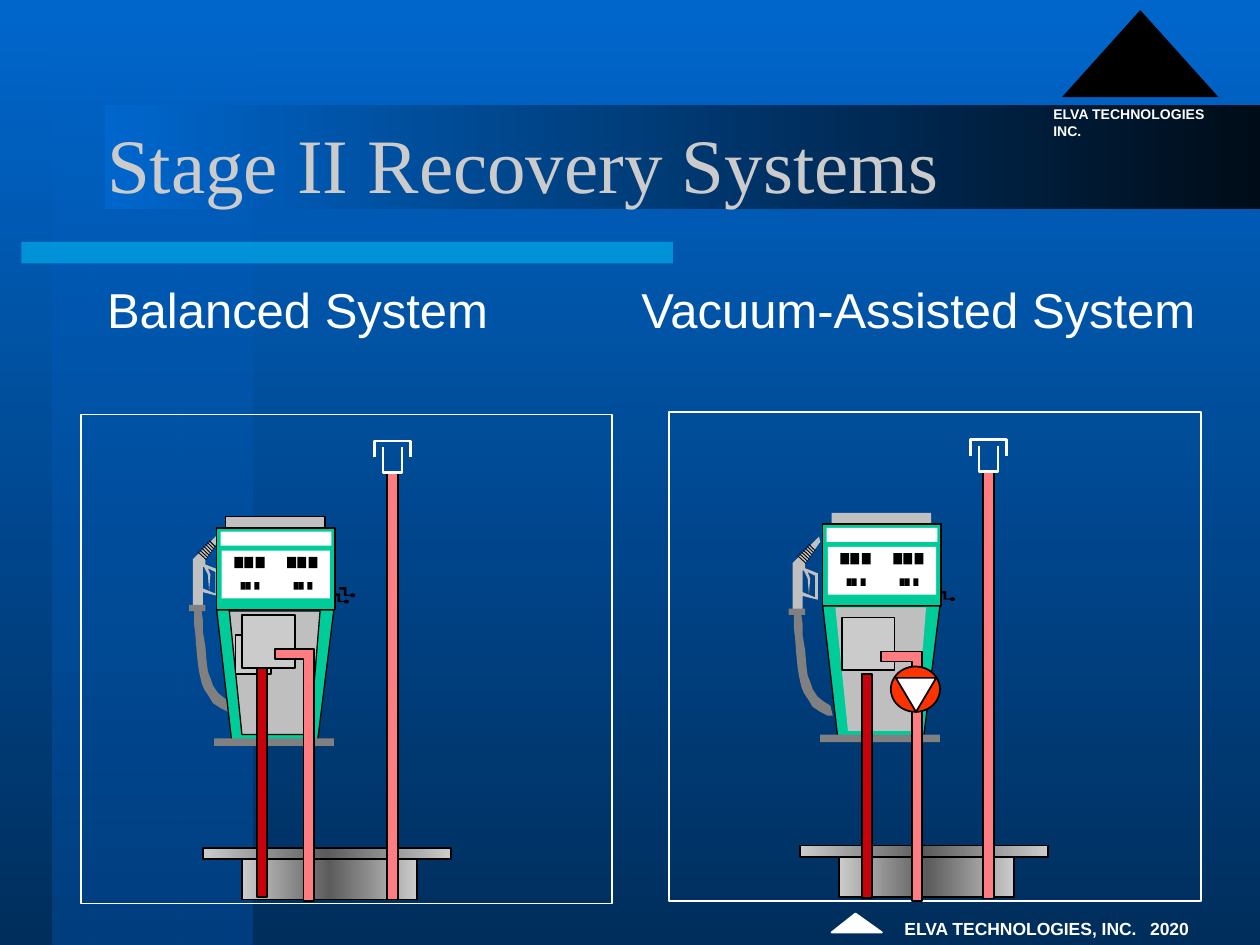
import pptx
import pptx.util
import pptx.dml.color
import pptx.enum.shapes
import pptx.enum.text
import pptx.oxml
import pptx.oxml.ns
from lxml import etree

Inches, Pt = pptx.util.Inches, pptx.util.Pt
qn = pptx.oxml.ns.qn
rgb = pptx.dml.color.RGBColor.from_string
FORM = pptx.enum.shapes.MSO_SHAPE
RECT, OVAL, TRIANGLE = FORM.RECTANGLE, FORM.OVAL, FORM.ISOSCELES_TRIANGLE
BLACK, WHITE, STEEL, PINK = "000000", "FFFFFF", "CBCBCB", "FF7C80"
GREEN, GREY, HOSE_GREY = "00CC99", "C0C0C0", "808080"
METAL = [STEEL, "5C5C5C", STEEL]


def paint(fill, root, colours, angle=0):
    """Fill with one RRGGBB[AA] colour, or a list of them as an even gradient."""
    if isinstance(colours, str):
        fill.solid()
        fill.fore_color.rgb = rgb(colours[:6])
        nodes = [root.find(".//" + qn("a:srgbClr"))]
        colours = [colours]
    else:
        fill.gradient()
        fill.gradient_angle = angle
        stops = root.find(".//" + qn("a:gsLst"))
        for stop in list(stops):
            stops.remove(stop)
        nodes = []
        for i, colour in enumerate(colours):
            position = str(round(100000 * i / (len(colours) - 1)))
            stop = etree.SubElement(stops, qn("a:gs"), pos=position)
            nodes.append(etree.SubElement(stop, qn("a:srgbClr"), val=colour[:6]))
    for node, colour in zip(nodes, colours):
        if len(colour) == 8:
            alpha = str(round(int(colour[6:], 16) / 255 * 100) * 1000)
            etree.SubElement(node, qn("a:alpha"), val=alpha)


def draw(form, at, fill=None, line=None, width=1, angle=0, closed=True):
    """Add a preset at (left, top, width, height), or a list of points offset by at."""
    if isinstance(form, list):
        points = [(Inches(at[0] + x), Inches(at[1] + y)) for x, y in form]
        outline = slide.shapes.build_freeform(*points[0])
        outline.add_line_segments(points[1:], close=closed)
        shape = outline.convert_to_shape()
    else:
        shape = slide.shapes.add_shape(form, *map(Inches, at))
    shape.shadow.inherit = False
    if fill:
        paint(shape.fill, shape._element.spPr, fill, angle)
    else:
        shape.fill.background()
    if line:
        shape.line.color.rgb = rgb(line)
        shape.line.width = Pt(width)
    else:
        shape.line.fill.background()
    return shape


prs = pptx.Presentation()
prs.slide_width, prs.slide_height = Inches(10), Inches(7.5)
slide = prs.slides.add_slide(prs.slide_layouts[3])
title, balanced, vacuum = slide.placeholders

# Backdrop
paint(slide.background.fill, slide._element, ["0066CC", "002E5C"], 270)
draw(RECT, (0.42, 0, 1.58, 7.5), ["0066CC80", "003F80"], angle=270)
draw(RECT, (0.17, 1.92, 5.17, 0.17), "00CCFF80")
draw(RECT, (0.83, 0.83, 9.17, 0.83), ["0066CC", "000C18"])
draw(TRIANGLE, (8.43, 0.08, 1.24, 0.69), BLACK)
draw(TRIANGLE, (6.6, 7.25, 0.4, 0.15), WHITE, WHITE).adjustments[0] = 0.475

# Text
company = slide.shapes.add_textbox(0, 0, 0, 0)
footer = slide.shapes.add_textbox(0, 0, 0, 0)
heading = {"size": Pt(28), "name": "Arial", "bold": False}
texts = [
    (title, (0.75, 0.67, 8.5, 1.25), "Stage II Recovery Systems", STEEL,
     {"size": Pt(44), "name": "Times New Roman", "bold": False}),
    (balanced, (0.75, 2.17, 4.17, 4.5), "Balanced System", WHITE, heading),
    (vacuum, (4.99, 2.17, 4.92, 4.5), "Vacuum-Assisted System", WHITE, heading),
    (company, (8.34, 0.83, 1.4, 0.3), "ELVA TECHNOLOGIES INC.", WHITE,
     {"size": Pt(8), "name": "Arial", "bold": True}),
    (footer, (7.08, 7.24, 2.6, 0.26), "ELVA TECHNOLOGIES, INC.\t2020", WHITE,
     {"size": Pt(10), "name": "Arial", "bold": True}),
]
for holder, place, words, colour, font_format in texts:
    slide.shapes._spTree.append(holder._element)
    for side, length in zip(("left", "top", "width", "height"), place):
        setattr(holder, side, Inches(length))
    frame = holder.text_frame
    frame.word_wrap = True
    frame.auto_size = pptx.enum.text.MSO_AUTO_SIZE.NONE
    paragraph = frame.paragraphs[0]
    paragraph.alignment = pptx.enum.text.PP_ALIGN.LEFT
    run = paragraph.add_run()
    run.text = words
    run.font.color.rgb = rgb(colour)
    for key, value in font_format.items():
        setattr(run.font, key, value)
title.text_frame.vertical_anchor = pptx.enum.text.MSO_ANCHOR.MIDDLE
for holder in (balanced, vacuum):
    properties = holder.text_frame.paragraphs[0]._p.get_or_add_pPr()
    properties.set("marL", "0")
    properties.set("indent", "0")
    etree.SubElement(properties, qn("a:buNone"))
for side, inset in (("left", 0.02), ("right", 0.02), ("top", 0.01), ("bottom", 0.01)):
    setattr(company.text_frame, "margin_" + side, Inches(inset))
tabs = etree.SubElement(footer.text_frame.paragraphs[0]._p.get_or_add_pPr(), qn("a:tabLst"))
etree.SubElement(tabs, qn("a:tab"), pos=str(Inches(1.95)), algn="l")

# Outlines, each relative to the corner of its part
nozzle_outline = [
    (0.21, 0), (0, 0.21), (0, 0.59), (0.08, 0.59), (0.08, 0.47), (0.2, 0.5), (0.2, 0.49),
    (0.08, 0.44), (0.08, 0.27), (0.09, 0.27), (0.12, 0.33), (0.13, 0.46), (0.14, 0.33),
    (0.12, 0.28), (0.18, 0.31), (0.18, 0.48), (0.2, 0.49), (0.2, 0.29), (0.1, 0.25),
    (0.1, 0.21), (0.22, 0.04)]
hose_outline = [
    (0.1, 0.57), (-0.03, 0.57), (-0.03, 0.62), (0.01, 0.62), (0.01, 0.72), (0.02, 0.8),
    (0.03, 0.93), (0.04, 1.03), (0.05, 1.1), (0.07, 1.19), (0.09, 1.24), (0.13, 1.3),
    (0.16, 1.35), (0.22, 1.39), (0.28, 1.42), (0.32, 1.42), (0.3, 1.34), (0.25, 1.31),
    (0.2, 1.27), (0.16, 1.21), (0.14, 1.15), (0.12, 1.1), (0.11, 1.02), (0.1, 0.9),
    (0.08, 0.78), (0.08, 0.69), (0.07, 0.62), (0.1, 0.62)]
wire_outline = [(0, 0), (0.06, 0), (0.06, 0.06), (0.1, 0.06), (0.1, 0.07), (0.04, 0.07),
                (0.04, 0.02), (0, 0.02)]
cabinet_outline = [(0.93, 0.65), (0.8, 1.7), (0.12, 1.7), (0, 0.65)]
door_outline = [(0.82, 0.66), (0.1, 0.66), (0.2, 1.64), (0.74, 1.64)]
cup_outline = [(-0.03, -0.2), (-0.03, 0), (0.12, 0), (0.12, -0.2)]
hood_outline = [(-0.1, -0.12), (-0.1, -0.25), (0.19, -0.25), (0.19, -0.12)]

systems = [
    {"frame": (0.64, 3.29), "tank": (1.92, 6.82), "vent": (3.07, 3.75), "nozzle": (1.53, 4.23),
     "wires": [(2.69, 4.66), (2.64, 4.71)], "pump": (1.72, 4.19), "trim": BLACK,
     "meters": [(1.87, 5.04, 0.28, 0.31), (1.92, 4.88, 0.42, 0.42)],
     "return": (2.18, 5.15), "reach": 0.31, "supply": (2.04, 5.3, 0.08, 1.82)},
    {"frame": (5.31, 3.27), "tank": (6.66, 6.8), "vent": (7.8, 3.74), "nozzle": (6.29, 4.26),
     "wires": [(7.45, 4.69)], "pump": (6.53, 4.16), "trim": None,
     "meters": [(6.68, 4.9, 0.42, 0.42)],
     "return": (6.99, 5.17), "reach": 0.33, "supply": (6.84, 5.35, 0.08, 1.78)},
]
for system in systems:
    draw(RECT, (*system["frame"], 4.22, 3.88), None, WHITE)

    x, y = system["tank"]
    draw(RECT, (x, y, 1.39, 0.32), METAL, BLACK)
    draw(RECT, (x - 0.31, y - 0.09, 1.97, 0.09), METAL, BLACK)

    x, y = system["vent"]
    draw(RECT, (x, y, 0.09, 3.39), PINK, BLACK)
    for outline in (cup_outline, hood_outline):
        draw(outline, (x, y), None, WHITE, 1.5, closed=False)

    x, y = system["nozzle"]
    draw(nozzle_outline, (x, y), GREY)
    for i in range(7):
        ends = (x + 0.18 - 0.012 * i, y + 0.11 + 0.017 * i,
                x + 0.13 - 0.015 * i, y + 0.06 + 0.015 * i)
        ridge = slide.shapes.add_connector(
            pptx.enum.shapes.MSO_CONNECTOR.STRAIGHT, *map(Inches, ends))
        ridge.line.color.rgb = rgb(BLACK)
        ridge.line.width = Pt(0.5)
        etree.SubElement(ridge._element.spPr, qn("a:effectLst"))
    draw(hose_outline, (x, y), HOSE_GREY)

    for x, y in system["wires"]:
        draw(wire_outline, (x, y), BLACK)
        draw(OVAL, (x + 0.09, y + 0.05, 0.04, 0.03), BLACK)

    x, y = system["pump"]
    draw(RECT, (x + 0.07, y - 0.09, 0.79, 0.18), GREY, system["trim"], 0.75)
    draw(RECT, (x, y, 0.94, 0.65), GREEN, BLACK, 0.75)
    draw(RECT, (x + 0.03, y + 0.03, 0.88, 0.11), WHITE)
    draw(RECT, (x + 0.04, y + 0.18, 0.86, 0.38), WHITE)
    for display in (x, x + 0.42):
        for digit in (0.14, 0.22, 0.31):
            draw(RECT, (display + digit, y + 0.23, 0.07, 0.09), BLACK)
        for digit in (0.19, 0.23, 0.3):
            draw(RECT, (display + digit, y + 0.43, 0.04, 0.06), BLACK)
    draw(cabinet_outline, (x, y), GREEN, BLACK, 0.75)
    draw(door_outline, (x, y), "BFBFBF", system["trim"], 0.75)
    draw(RECT, (x - 0.02, y + 1.67, 0.95, 0.06), HOSE_GREY)

    for meter in system["meters"]:
        draw(RECT, meter, STEEL, BLACK)
    reach, drop = system["reach"], 7.15 - system["return"][1]
    draw([(0, 0.08), (reach - 0.08, 0.08), (reach - 0.08, drop), (reach, drop), (reach, 0),
          (0, 0)], system["return"], PINK, BLACK)
    draw(RECT, system["supply"], "C9010B", BLACK)

# Vacuum pump on the return pipe of the assisted system
draw(OVAL, (7.07, 5.29, 0.39, 0.36), "FF3300", BLACK)
draw(TRIANGLE, (7.11, 5.38, 0.32, 0.27), WHITE, BLACK).rotation = 180

prs.save("out.pptx")
